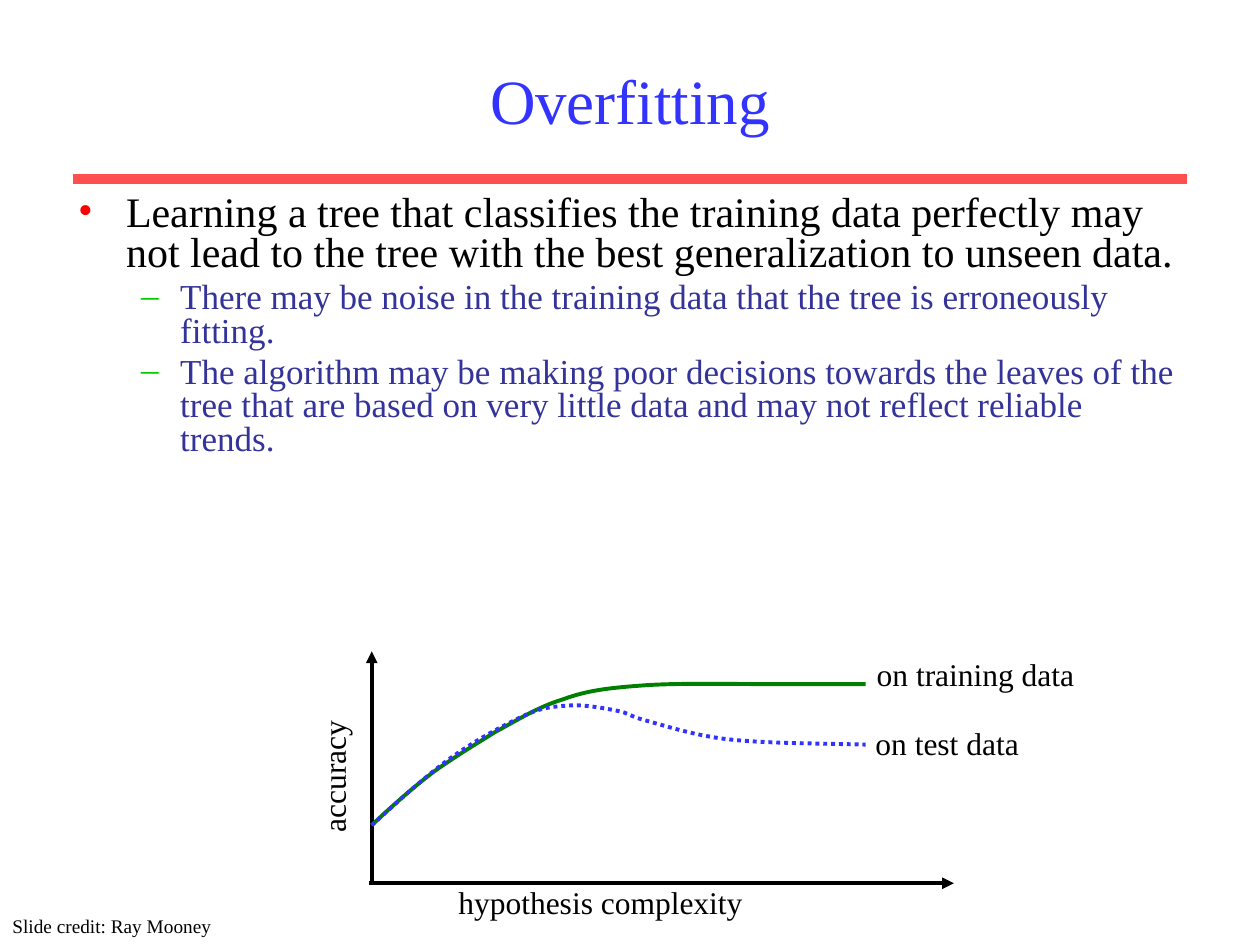
from dataclasses import dataclass

from lxml.etree import SubElement
from pptx import Presentation
from pptx.dml.color import RGBColor
from pptx.enum.dml import MSO_LINE_DASH_STYLE as Dash
from pptx.enum.shapes import MSO_CONNECTOR_TYPE as Connector
from pptx.enum.text import MSO_ANCHOR as Anchor, MSO_AUTO_SIZE as AutoSize, PP_ALIGN as Align
from pptx.oxml.ns import qn
from pptx.util import Pt

PX = 9144  # EMU per px, 100 px to the inch


@dataclass(frozen=True)
class Theme:
    font: str = "Times New Roman"
    title: str = "3333FF"
    rule: str = "FF5050"
    ink: str = "000000"
    detail: str = "333399"
    bullet: str = "FF0000"
    dash: str = "00CC00"
    training: str = "008000"
    test: str = "3333FF"
    title_size: int = 36
    body_size: int = 24
    detail_size: int = 20
    label_size: int = 18
    credit_size: int = 11
    rule_width: float = 6
    line_width: float = 2.25


def apply(target, values):
    for name, value in values.items():
        setattr(target, name, value)


class SlideBuilder:
    def __init__(self, page, theme):
        self.page = page
        self.theme = theme

    def place(self, shape, left, top, width, height):
        apply(shape, dict(left=left * PX, top=top * PX, width=width * PX, height=height * PX))

    def add_text(self, para, text, size, color):
        span = para.add_run()
        span.text = text
        apply(span.font, dict(name=self.theme.font, size=Pt(size)))
        span.font.color.rgb = RGBColor.from_string(color)

    def stroke(self, shape, color, width, dash=None):
        shape.line.color.rgb = RGBColor.from_string(color)
        apply(shape.line, dict(width=Pt(width), dash_style=dash))

    def title(self, text, bounds):
        box = self.page.shapes.title
        self.place(box, *bounds)
        apply(box.text_frame, dict(vertical_anchor=Anchor.MIDDLE, auto_size=AutoSize.NONE))
        para = box.text_frame.paragraphs[0]
        para.alignment = Align.CENTER
        self.add_text(para, text, self.theme.title_size, self.theme.title)

    def bullets(self, items, bounds):
        theme = self.theme
        levels = (
            (theme.body_size, theme.ink, "•", theme.bullet, 38, -38),
            (theme.detail_size, theme.detail, "–", theme.dash, 81, -31),
        )
        box = self.page.placeholders[1]
        self.place(box, *bounds)
        frame = box.text_frame
        apply(frame, dict(vertical_anchor=Anchor.TOP, auto_size=AutoSize.NONE, word_wrap=True))
        for index, (level, text) in enumerate(items):
            size, color, mark, mark_color, margin, indent = levels[level]
            para = frame.add_paragraph() if index else frame.paragraphs[0]
            apply(para, dict(level=level, line_spacing=0.8, space_before=Pt(size * 0.2)))
            props = para._p.get_or_add_pPr()
            props.set("marL", str(margin * PX))
            props.set("indent", str(indent * PX))
            SubElement(SubElement(props, qn("a:buClr")), qn("a:srgbClr"), val=mark_color)
            SubElement(props, qn("a:buFont"), typeface=theme.font)
            SubElement(props, qn("a:buChar"), char=mark)
            self.add_text(para, text, size, color)

    def line(self, start, end, color, width, arrow=False):
        ends = [value * PX for value in (*start, *end)]
        line = self.page.shapes.add_connector(Connector.STRAIGHT, *ends)
        self.stroke(line, color, width)
        if arrow:
            SubElement(line.line._get_or_add_ln(), qn("a:tailEnd"), type="triangle")
        SubElement(line._element.spPr, qn("a:effectLst"))

    def label(self, text, bounds, size=None, rotation=0, shapes=None):
        shapes = self.page.shapes if shapes is None else shapes
        box = shapes.add_textbox(*(value * PX for value in bounds))
        box.rotation = rotation
        apply(box.text_frame, dict(word_wrap=False, auto_size=AutoSize.SHAPE_TO_FIT_TEXT))
        para = box.text_frame.paragraphs[0]
        self.add_text(para, text, size or self.theme.label_size, self.theme.ink)

    def curve(self, points, color, text, bounds, dash=None):
        """Group a smooth curve with its label; three points make each Bezier piece."""
        shapes = self.page.shapes.add_group_shape().shapes
        builder = shapes.build_freeform(*points[0], scale=PX)
        builder.add_line_segments(points[1:], close=False)
        shape = builder.convert_to_shape()
        shape.shadow.inherit = False
        shape.fill.background()
        self.stroke(shape, color, self.theme.line_width, dash)
        outline = next(shape._element.iter(qn("a:path")))
        steps = outline.findall(qn("a:lnTo"))
        for first in range(0, len(steps), 3):
            piece = SubElement(outline, qn("a:cubicBezTo"))
            for step in steps[first:first + 3]:
                piece.append(step[0])
                outline.remove(step)
        self.label(text, bounds, shapes=shapes)


TRAINING = [
    (295, 655), (312, 639), (329, 624), (345, 612), (362, 600), (377, 591), (393, 581),
    (410, 572), (427, 561), (447, 555), (466, 548), (483, 546), (511, 544),
    (538, 542), (581, 543), (611, 543), (640, 543), (663, 543), (687, 543),
]
TEST = [
    (295, 655), (317, 635), (340, 614), (360, 600), (380, 586), (401, 575), (416, 568),
    (431, 561), (439, 561), (451, 560), (463, 559), (479, 562), (489, 564),
    (500, 566), (498, 568), (513, 572), (528, 576), (551, 584), (580, 587),
    (609, 590), (648, 590), (687, 591),
]
POINTS = [
    (0, "Learning a tree that classifies the training data perfectly may not lead to "
        "the tree with the best generalization to unseen data."),
    (1, "There may be noise in the training data that the tree is erroneously fitting."),
    (1, "The algorithm may be making poor decisions towards the leaves of the tree that "
        "are based on very little data and may not reflect reliable trends."),
]


def main():
    deck = Presentation()
    apply(deck, dict(slide_width=1000 * PX, slide_height=750 * PX))
    theme = Theme()
    slide = SlideBuilder(deck.slides.add_slide(deck.slide_layouts[1]), theme)

    # Heading and bullets
    slide.line((58, 142), (942, 142), theme.rule, theme.rule_width)
    slide.title("Overfitting", (75, 25, 850, 108))
    slide.bullets(POINTS, (52, 150, 893, 355))

    # Axes
    slide.line((295, 701), (295, 517), theme.ink, theme.line_width, arrow=True)
    slide.line((293, 701), (757, 701), theme.ink, theme.line_width, arrow=True)
    slide.label("hypothesis complexity", (354, 696, 270, 43))
    slide.label("accuracy", (207, 590, 118, 43), rotation=270)

    # Accuracy curves
    slide.curve(TRAINING, theme.training, "on training data", (686, 515, 194, 43))
    slide.curve(TEST, theme.test, "on test data", (685, 570, 146, 43), Dash.ROUND_DOT)

    # Credit
    slide.label("Slide credit: Ray Mooney", (0, 721, 187, 29), theme.credit_size)

    deck.save("out.pptx")


if __name__ == "__main__":
    main()
